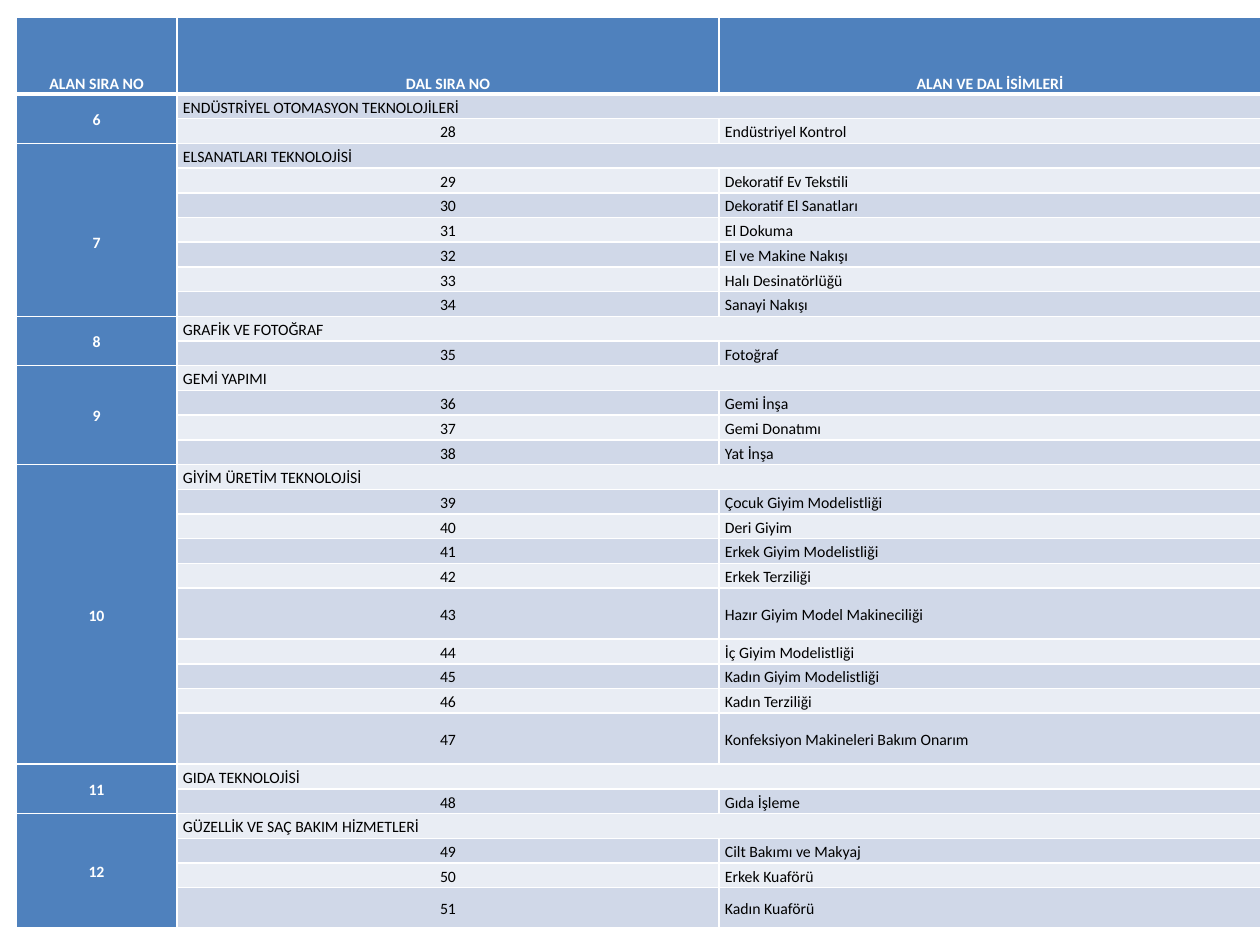
import pptx
import pptx.dml.color
import pptx.enum.text
import pptx.oxml.ns
import pptx.util
from lxml import etree

PX = 914400 // 126
COLORS = {"blue": "4F81BD", "dark_band": "D0D8E8", "light_band": "E9EDF4",
          "white": "FFFFFF", "black": "000000"}
TABLE_LEFT, TABLE_TOP, TABLE_HEIGHT = 16, 17, 912
COLUMN_WIDTHS = [161, 542, 542]
HEADER_HEIGHT = 77
TALL_ROWS = {43: 51, 47: 51, 51: 40}  # branch number: row height
CELL_INSET = 6
HEADINGS = ["ALAN SIRA NO", "DAL SIRA NO", "ALAN VE DAL İSİMLERİ"]
FIRST_FIELD, FIRST_BRANCH = 6, 28
LOWERED_FIELD, LOWERED_INSET = 7, 24
FIELDS = [
    ("ENDÜSTRİYEL OTOMASYON TEKNOLOJİLERİ", ["Endüstriyel Kontrol"]),
    ("ELSANATLARI TEKNOLOJİSİ", [
        "Dekoratif Ev Tekstili", "Dekoratif El Sanatları", "El Dokuma",
        "El ve Makine Nakışı", "Halı Desinatörlüğü", "Sanayi Nakışı"]),
    ("GRAFİK VE FOTOĞRAF", ["Fotoğraf"]),
    ("GEMİ YAPIMI", ["Gemi İnşa", "Gemi Donatımı", "Yat İnşa"]),
    ("GİYİM ÜRETİM TEKNOLOJİSİ", [
        "Çocuk Giyim Modelistliği", "Deri Giyim", "Erkek Giyim Modelistliği",
        "Erkek Terziliği", "Hazır Giyim Model Makineciliği",
        "İç Giyim Modelistliği", "Kadın Giyim Modelistliği",
        "Kadın Terziliği", "Konfeksiyon Makineleri Bakım Onarım"]),
    ("GIDA TEKNOLOJİSİ", ["Gıda İşleme"]),
    ("GÜZELLİK VE SAÇ BAKIM HİZMETLERİ", [
        "Cilt Bakımı ve Makyaj", "Erkek Kuaförü", "Kadın Kuaförü"]),
]


def px(length):
    return pptx.util.Emu(round(length * PX))


def rgb(name):
    return pptx.dml.color.RGBColor.from_string(COLORS[name])


def add_border(cell, side, points):
    properties = cell._tc.get_or_add_tcPr()
    line = etree.SubElement(properties, pptx.oxml.ns.qn(f"a:ln{side}"),
                            w=str(pptx.util.Pt(points)))
    fill = etree.SubElement(line, pptx.oxml.ns.qn("a:solidFill"))
    etree.SubElement(fill, pptx.oxml.ns.qn("a:srgbClr"), val=COLORS["white"])


def style_cell(cell, row_index, column_index):
    """Give borders, fill and text format by the cell's place in the grid."""
    is_header = row_index == 0
    is_blue = is_header or column_index == 0
    for side in "LRTB":
        thick = (is_header and side == "B") or (row_index == 1 and side == "T")
        add_border(cell, side, 3 if thick else 1)
    band = "dark_band" if row_index % 2 else "light_band"
    cell.fill.solid()
    cell.fill.fore_color.rgb = rgb("blue" if is_blue else band)
    anchor = pptx.enum.text.MSO_ANCHOR
    cell.vertical_anchor = anchor.BOTTOM if is_header else anchor.MIDDLE
    cell.margin_left = cell.margin_right = px(CELL_INSET)
    cell.margin_top = cell.margin_bottom = 0
    centered = is_blue or (column_index == 1 and not cell.is_merge_origin)
    align = pptx.enum.text.PP_ALIGN
    paragraph = cell.text_frame.paragraphs[0]
    paragraph.alignment = align.CENTER if centered else align.LEFT
    paragraph.line_spacing = 1.15
    paragraph.space_after = pptx.util.Pt(10)
    paragraph.font.name = "Calibri"
    paragraph.font.size = pptx.util.Pt(9)
    paragraph.font.bold = is_blue
    paragraph.font.color.rgb = rgb("white" if is_blue else "black")


def fill_fields(table):
    """Write each field's name row and its branches, merging as needed."""
    row, branch_number = 1, FIRST_BRANCH
    for field_number, (field, branches) in enumerate(FIELDS, FIRST_FIELD):
        table.cell(row, 0).merge(table.cell(row + len(branches), 0))
        table.cell(row, 1).merge(table.cell(row, 2))
        table.cell(row, 0).text = str(field_number)
        table.cell(row, 1).text = field
        for row, branch in enumerate(branches, row + 1):
            table.cell(row, 1).text = str(branch_number)
            table.cell(row, 2).text = branch
            if branch_number in TALL_ROWS:
                table.rows[row].height = px(TALL_ROWS[branch_number])
            branch_number += 1
        row += 1


def add_field_table(slide):
    body_count = sum(1 + len(branches) for _, branches in FIELDS)
    table = slide.shapes.add_table(
        body_count + 1, len(HEADINGS), px(TABLE_LEFT), px(TABLE_TOP),
        px(sum(COLUMN_WIDTHS)), px(TABLE_HEIGHT)).table
    for column, width in zip(table.columns, COLUMN_WIDTHS):
        column.width = px(width)
    free_height = TABLE_HEIGHT - HEADER_HEIGHT - sum(TALL_ROWS.values())
    for row in table.rows:
        row.height = px(free_height / (body_count - len(TALL_ROWS)))
    table.rows[0].height = px(HEADER_HEIGHT)
    for column_index, heading in enumerate(HEADINGS):
        table.cell(0, column_index).text = heading
    fill_fields(table)
    for row_index, row in enumerate(table.rows):
        for column_index, cell in enumerate(row.cells):
            style_cell(cell, row_index, column_index)
            if column_index == 0 and cell.text == str(LOWERED_FIELD):
                cell.margin_top = px(LOWERED_INSET)


def main():
    presentation = pptx.Presentation()
    presentation.slide_width = pptx.util.Inches(10)
    presentation.slide_height = pptx.util.Inches(7.5)
    slide = presentation.slides.add_slide(presentation.slide_layouts[6])
    add_field_table(slide)
    presentation.save("out.pptx")


if __name__ == "__main__":
    main()
